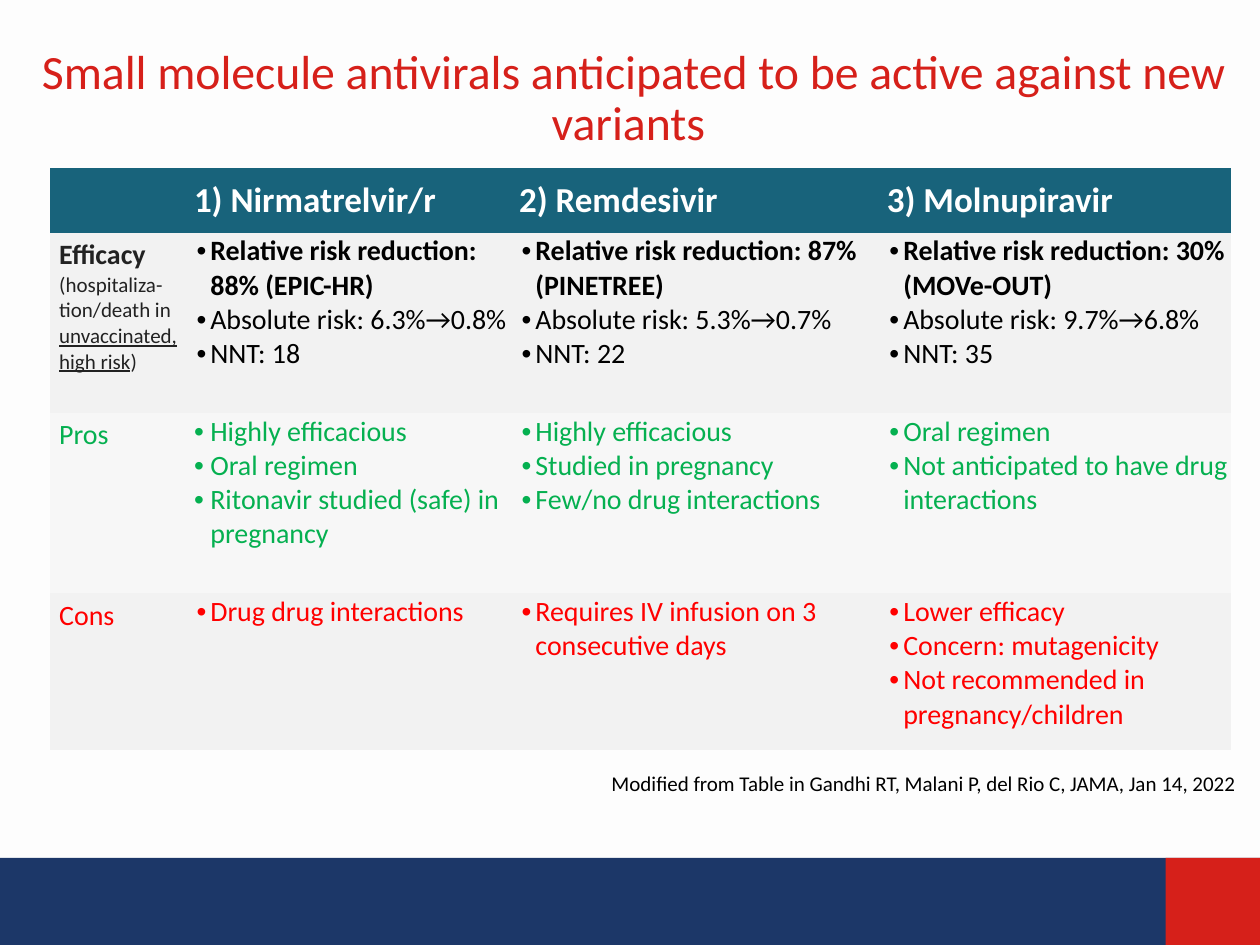
from lxml import etree
from pptx import Presentation
from pptx import util as u
from pptx.dml.color import RGBColor
from pptx.enum import shapes, text
from pptx.oxml.ns import qn

Inches = u.Inches
COLORS = {
    "page": "FDFDFD", "navy": "1C3768", "red": "D6201A", "teal": "18637B",
    "band": "F2F2F2", "light_band": "F7F7F7", "white": "FFFFFF",
    "black": "000000", "label": "222222", "pros": "05B050", "cons": "FF0000",
}
NO_GRID_STYLE = "{2D5ABB26-0587-4C30-8999-92F81FD0307C}"


def write(paragraph, content, size=16, color="black", bold=False, underline=False,
          align=None, spacing=None, hanging=None):
    if hanging:
        properties = paragraph._p.get_or_add_pPr()
        properties.set("marL", str(Inches(0.13)))
        properties.set("indent", str(-Inches(hanging)))
        etree.SubElement(properties, qn("a:buFont")).set("typeface", "Arial")
        etree.SubElement(properties, qn("a:buChar")).set("char", "•")
    if align is not None:
        paragraph.alignment = align
    if spacing:
        paragraph.line_spacing = spacing
    run = paragraph.add_run()
    run.text = content
    run.font.name = "Calibri"
    run.font.size = u.Pt(size)
    run.font.bold = bold
    run.font.underline = underline
    run.font.color.rgb = RGBColor.from_string(COLORS[color])


def set_margins(cell, side, top, bottom):
    cell.margin_left = cell.margin_right = Inches(side)
    cell.margin_top, cell.margin_bottom = Inches(top), Inches(bottom)


deck = Presentation()
deck.slide_width, deck.slide_height = Inches(10), Inches(7.5)
slide = deck.slides.add_slide(deck.slide_layouts[6])
slide.background.fill.solid()
slide.background.fill.fore_color.rgb = RGBColor.from_string(COLORS["page"])

for left, width, color in [(0, 10, "navy"), (9.25, 0.75, "red")]:
    footer = slide.shapes.add_shape(shapes.MSO_SHAPE.RECTANGLE, Inches(left), Inches(6.81),
                                    Inches(width), Inches(0.7))
    footer.shadow.inherit = False
    footer.fill.solid()
    footer.fill.fore_color.rgb = RGBColor.from_string(COLORS[color])
    footer.line.fill.background()

drugs = ["1) Nirmatrelvir/r", "2) Remdesivir", "3) Molnupiravir"]
efficacy = [
    ["Relative risk reduction: 88% (EPIC-HR)", "Absolute risk: 6.3%→0.8%", "NNT: 18"],
    ["Relative risk reduction: 87% (PINETREE)", "Absolute risk: 5.3%→0.7%", "NNT: 22"],
    ["Relative risk reduction: 30% (MOVe-OUT)", "Absolute risk: 9.7%→6.8%", "NNT: 35"],
]
pros = [
    ["Highly efficacious", "Oral regimen", "Ritonavir studied (safe) in pregnancy"],
    ["Highly efficacious", "Studied in pregnancy", "Few/no drug interactions"],
    ["Oral regimen", "Not anticipated to have drug interactions"],
]
cons = [
    ["Drug drug interactions"],
    ["Requires IV infusion on 3 consecutive days"],
    ["Lower efficacy", "Concern: mutagenicity", "Not recommended in pregnancy/children"],
]
efficacy_label = [
    ("Efficacy ", dict(color="label", bold=True)),
    ("(hospitaliza-tion/death in ", dict(color="label", size=12)),
    ("unvaccinated, high risk", dict(color="label", size=12, underline=True)),
    (")", dict(color="label", size=12)),
]
sections = [
    (efficacy_label, efficacy, "black", "band"),
    ([("Pros", dict(color="pros"))], pros, "pros", "light_band"),
    ([("Cons", dict(color="cons"))], cons, "cons", "band"),
]

comparison = slide.shapes.add_table(4, 4, Inches(0.4), Inches(1.33),
                                    Inches(9.37), Inches(4.62)).table
comparison._tbl.tblPr.find(qn("a:tableStyleId")).text = NO_GRID_STYLE
for column, width in zip(comparison.columns, [1.13, 2.58, 2.92, 2.74]):
    column.width = Inches(width)
for row, height in zip(comparison.rows, [0.52, 1.43, 1.43, 1.24]):
    row.height = Inches(height)

for row, fill in enumerate(["teal"] + [section[3] for section in sections]):
    for column in range(4):
        cell = comparison.cell(row, column)
        set_margins(cell, 0.01, 0.01, 0)
        cell.fill.solid()
        cell.fill.fore_color.rgb = RGBColor.from_string(COLORS[fill])

for column, drug in enumerate(drugs, 1):
    header = comparison.cell(0, column)
    header.vertical_anchor = text.MSO_ANCHOR.MIDDLE
    write(header.text_frame.paragraphs[0], drug, size=20, color="white", bold=True)

for row, (label, findings, color, fill) in enumerate(sections, 1):
    label_cell = comparison.cell(row, 0)
    set_margins(label_cell, 0.07, 0.04, 0.04)
    for content, style in label:
        write(label_cell.text_frame.paragraphs[0], content, **style)
    for column, points in enumerate(findings, 1):
        frame = comparison.cell(row, column).text_frame
        for index, point in enumerate(points):
            paragraph = frame.add_paragraph() if index else frame.paragraphs[0]
            write(paragraph, point, color=color, bold=findings is efficacy and index == 0,
                  hanging=0.13 if findings is pros and column == 1 else 0.11)

citation = slide.shapes.add_textbox(Inches(0.14), Inches(6.07), Inches(9.77), Inches(0.3))
citation.text_frame.word_wrap = True
write(citation.text_frame.paragraphs[0],
      "Modified from Table in Gandhi RT, Malani P, del Rio C, JAMA, Jan 14, 2022",
      size=12, align=text.PP_ALIGN.RIGHT)

title = slide.shapes.add_textbox(Inches(0.03), Inches(0.33), Inches(10), Inches(1.09))
title.text_frame.word_wrap = True
write(title.text_frame.paragraphs[0],
      "Small molecule antivirals anticipated to be active against new variants ",
      size=27.3, color="red", align=text.PP_ALIGN.CENTER, spacing=0.9)

deck.save("out.pptx")
